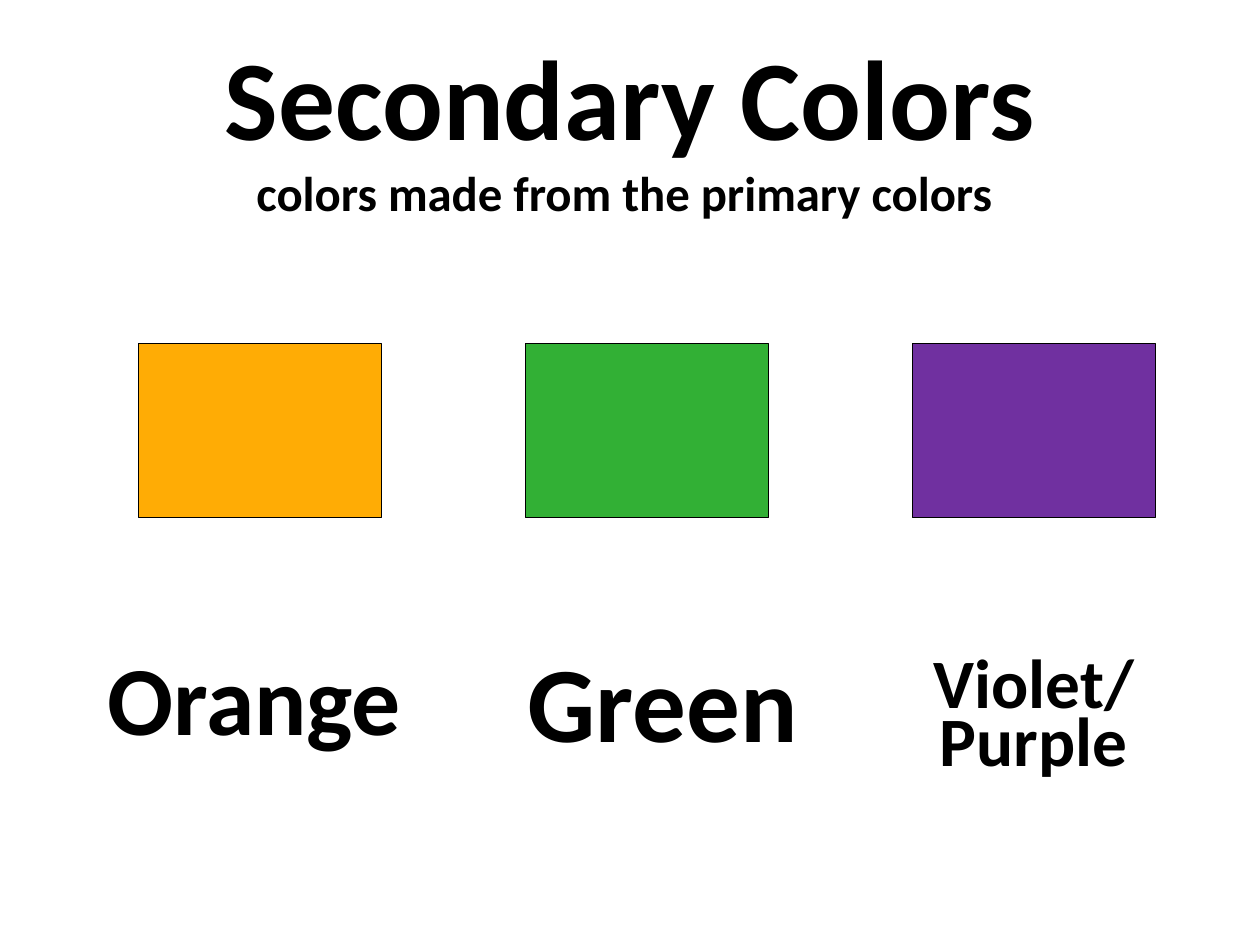
from dataclasses import dataclass

from pptx import Presentation
from pptx.dml.color import RGBColor as Rgb
from pptx.enum.shapes import MSO_SHAPE as Kind
from pptx.enum.text import MSO_ANCHOR as Anchor, MSO_AUTO_SIZE as Fit, PP_ALIGN as Align
from pptx.util import Cm, Pt


@dataclass(frozen=True)
class Theme:
    face: str = "Calibri"
    ink: str = "000000"
    orange: str = "FFAC05"
    green: str = "32B035"
    violet: str = "7030A0"
    title: float = 64.8
    sub: float = 27.9
    large: float = 61.2
    mid: float = 55.8
    small: float = 39.6
    edge: float = 0.75


def apply(item, values):
    for name, value in values.items():
        setattr(item, name, value)


class Page:
    def __init__(self, slide, theme):
        self.slide, self.theme = slide, theme

    def frame(self, shape):
        """Set up the text frame and return its first paragraph."""
        frame = shape.text_frame
        apply(frame, {"auto_size": Fit.NONE, "word_wrap": True,
                      "vertical_anchor": Anchor.MIDDLE})
        para = frame.paragraphs[0]
        para.alignment = Align.CENTER
        return para

    def run(self, para, text, size):
        run = para.add_run()
        run.text = text
        apply(run.font, {"name": self.theme.face, "size": Pt(size), "bold": True})
        run.font.color.rgb = Rgb.from_string(self.theme.ink)

    def title(self, box, head, sub):
        shape = self.slide.shapes.title
        apply(shape, dict(zip(("left", "top", "width", "height"), map(Cm, box))))
        para = self.frame(shape)
        self.run(para, head, self.theme.title)
        para.add_line_break()
        self.run(para, sub, self.theme.sub)

    def swatch(self, box, color):
        shape = self.slide.shapes.add_shape(Kind.RECTANGLE, *map(Cm, box))
        shape.shadow.inherit = False
        shape.fill.solid()
        shape.fill.fore_color.rgb = Rgb.from_string(color)
        shape.line.color.rgb = Rgb.from_string(self.theme.ink)
        shape.line.width = Pt(self.theme.edge)

    def label(self, box, text, size, space):
        para = self.frame(self.slide.shapes.add_textbox(*map(Cm, box)))
        para.line_spacing = space
        self.run(para, text, size)


def main():
    deck = Presentation()
    apply(deck, {"slide_width": Cm(25.4), "slide_height": Cm(19.05)})
    theme = Theme()
    page = Page(deck.slides.add_slide(deck.slide_layouts[5]), theme)
    page.title((1.27, 0.76, 22.86, 3.48),
               "Secondary Colors", "colors made from the primary colors ")

    left, step = 2.79, 7.8
    for col, color in enumerate((theme.orange, theme.green, theme.violet)):
        page.swatch((left + col * step, 6.93, 4.9, 3.5), color)

    labels = (
        ((1.7, 12.5, 6.86, 3.68), "Orange", theme.mid, 0.7),
        ((10.16, 12.5, 6.4, 3.68), "Green", theme.large, 0.8),
        ((18.39, 12.67, 4.9, 3.68), "Violet/Purple", theme.small, 0.7),
    )
    for label in labels:
        page.label(*label)
    deck.save("out.pptx")


if __name__ == "__main__":
    main()
